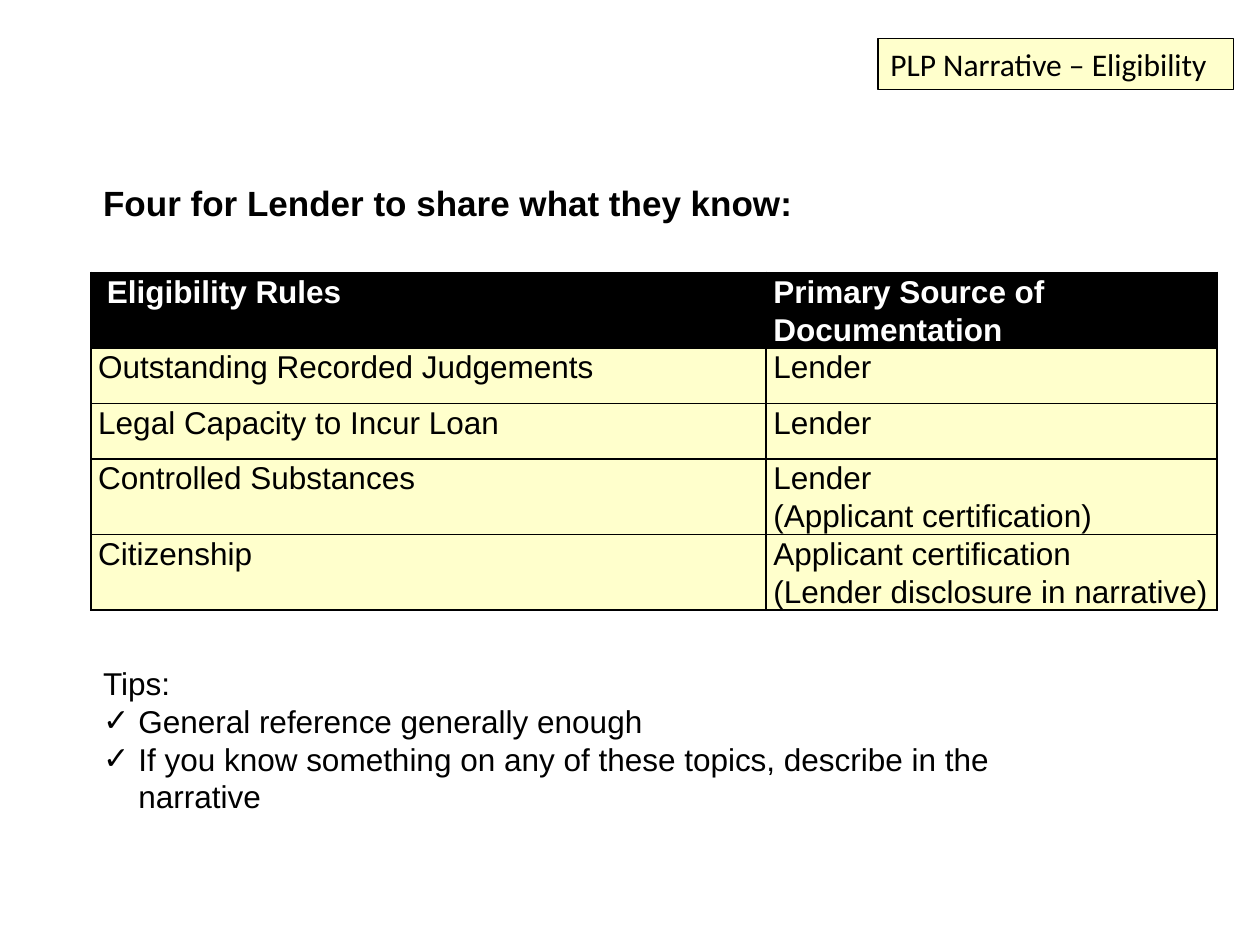
"""Build the PLP narrative eligibility slide with its documentation table and tips."""
from lxml import etree
from pptx import Presentation
from pptx import util as u
from pptx.dml.color import RGBColor
from pptx.enum import shapes, text
from pptx.oxml import ns

BLACK = RGBColor(0x00, 0x00, 0x00)
WHITE = RGBColor(0xFF, 0xFF, 0xFF)
CREAM = RGBColor(0xFF, 0xFF, 0xCC)

LABEL = "PLP Narrative – Eligibility"
HEADING = "Four for Lender to share what they know:"
ROWS = [
    (" Eligibility Rules", "Primary Source of Documentation"),
    ("Outstanding Recorded Judgements", "Lender"),
    ("Legal Capacity to Incur Loan", "Lender"),
    ("Controlled Substances", "Lender\n(Applicant certification)"),
    ("Citizenship", "Applicant certification\n(Lender disclosure in narrative)"),
]
TIPS_TITLE = "Tips:"
TIPS = [
    "General reference generally enough",
    "If you know something on any of these topics, describe in the narrative",
]

LEFT = 1.83
COLUMN_WIDTHS = [13.61, 9.09]
ROW_HEIGHTS = [1.12, 1.12, 1.12, 1.19, 1.19]
CELL_MARGIN = 0.15
BULLET_INDENT = 0.71


def style(paragraph, size, color=BLACK, bold=False, name="Arial"):
    font = paragraph.font
    font.name, font.size, font.bold = name, u.Pt(size), bold
    font.color.rgb = color


def add_bullet(paragraph):
    properties = paragraph._p.get_or_add_pPr()
    indent = u.Cm(BULLET_INDENT)
    properties.set("marL", str(indent))
    properties.set("indent", str(-indent))
    etree.SubElement(properties, ns.qn("a:buFont"), typeface="Arial")
    etree.SubElement(properties, ns.qn("a:buChar"), char="✓")


def add_borders(cell):
    properties = cell._tc.get_or_add_tcPr()
    for position, side in enumerate(("lnL", "lnR", "lnT", "lnB")):
        line = etree.Element(ns.qn(f"a:{side}"), w=str(u.Pt(1)))
        fill = etree.SubElement(line, ns.qn("a:solidFill"))
        etree.SubElement(fill, ns.qn("a:srgbClr"), val=str(BLACK))
        properties.insert(position, line)


def add_text(slide, left, top, width, height, lines):
    box = slide.shapes.add_textbox(u.Cm(left), u.Cm(top), u.Cm(width), u.Cm(height))
    box.text_frame.word_wrap = True
    box.text_frame.text = "\n".join(lines)
    return box.text_frame.paragraphs


def add_rules_table(slide):
    frame = slide.shapes.add_table(
        len(ROWS), len(COLUMN_WIDTHS), u.Cm(LEFT), u.Cm(5.49),
        u.Cm(sum(COLUMN_WIDTHS)), u.Cm(sum(ROW_HEIGHTS)))
    table = frame.table
    for column, width in zip(table.columns, COLUMN_WIDTHS):
        column.width = u.Cm(width)
    for row_index, (row, height) in enumerate(zip(table.rows, ROW_HEIGHTS)):
        row.height = u.Cm(height)
        header = row_index == 0
        for cell, content in zip(row.cells, ROWS[row_index]):
            cell.text = content
            cell.margin_left = cell.margin_right = u.Cm(CELL_MARGIN)
            cell.margin_top = cell.margin_bottom = 0
            cell.fill.solid()
            cell.fill.fore_color.rgb = BLACK if header else CREAM
            add_borders(cell)
            for paragraph in cell.text_frame.paragraphs:
                paragraph.line_spacing = 1.07
                style(paragraph, 18, WHITE if header else BLACK, header)


def add_label(slide):
    label = slide.shapes.add_shape(
        shapes.MSO_SHAPE.RECTANGLE, u.Cm(17.7), u.Cm(0.78), u.Cm(7.17), u.Cm(1.03))
    label.shadow.inherit = False
    label.fill.solid()
    label.fill.fore_color.rgb = CREAM
    label.line.color.rgb = BLACK
    label.line.width = u.Pt(0.75)
    frame = label.text_frame
    frame.word_wrap = True
    frame.vertical_anchor = text.MSO_ANCHOR.TOP
    frame.text = LABEL
    paragraph = frame.paragraphs[0]
    paragraph.alignment = text.PP_ALIGN.LEFT
    style(paragraph, 18, name="Calibri")


def main():
    presentation = Presentation()
    presentation.slide_width, presentation.slide_height = u.Cm(25.4), u.Cm(19.05)
    slide = presentation.slides.add_slide(presentation.slide_layouts[6])
    add_rules_table(slide)
    tips = add_text(slide, LEFT, 13.26, 20.8, 3.33, [TIPS_TITLE, *TIPS])
    for paragraph in tips[1:]:
        add_bullet(paragraph)
    for paragraph in tips:
        style(paragraph, 18)
    heading = add_text(slide, LEFT, 3.53, 15.37, 1.11, [HEADING])
    style(heading[0], 20, bold=True)
    add_label(slide)
    presentation.save("out.pptx")


if __name__ == "__main__":
    main()
